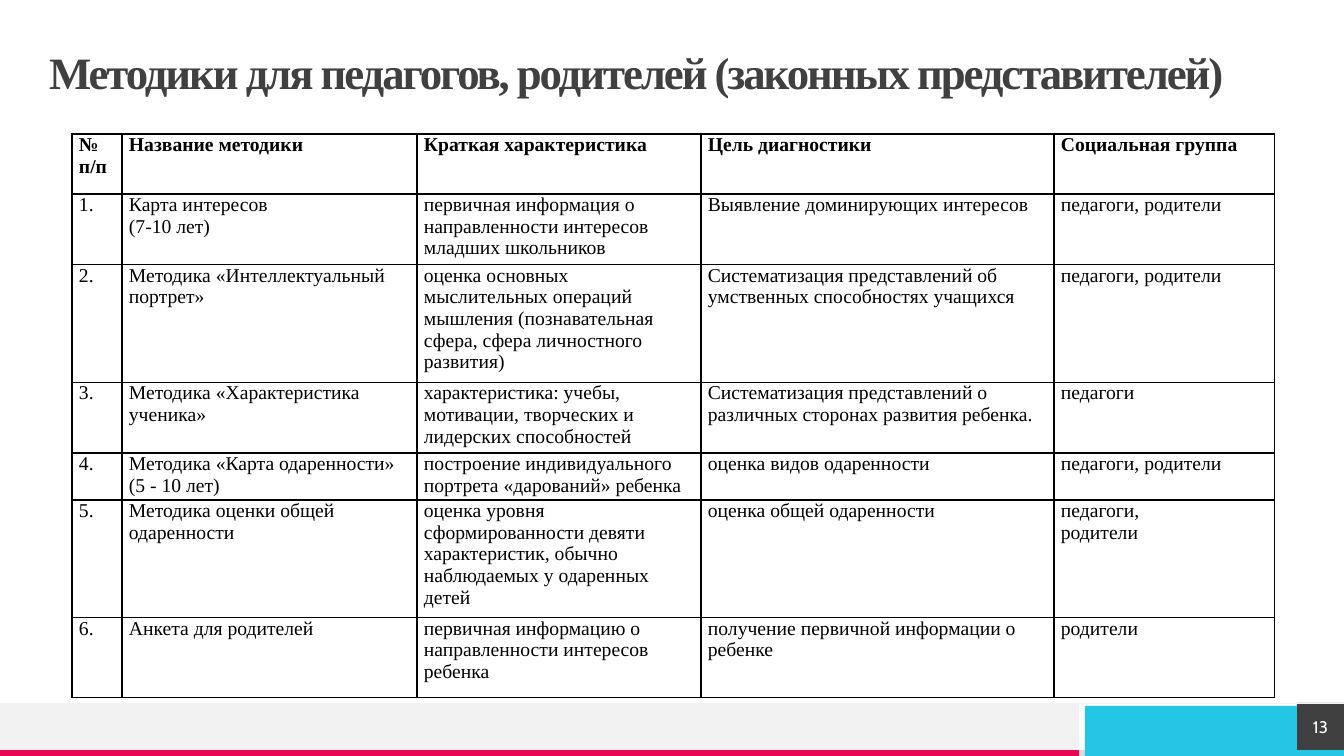
from lxml import etree
from pptx import Presentation
from pptx import util as u
from pptx.dml.color import RGBColor
from pptx.enum import shapes, text
from pptx.oxml import ns

PX = 914400 / 100.8
DARK = RGBColor(0x40, 0x40, 0x40)
BLACK = RGBColor(0, 0, 0)
WHITE = RGBColor(0xFF, 0xFF, 0xFF)
PALE = RGBColor(0xF2, 0xF2, 0xF2)
GREY = RGBColor(0xDA, 0xDA, 0xDA)
PINK = RGBColor(0xE8, 0x05, 0x54)
CYAN = RGBColor(0x25, 0xC6, 0xE3)
SERIF = "Times New Roman"


def px(*vals):
    return [u.Emu(round(v * PX)) for v in vals]


def write(para, words, size, color, face, bold=False):
    run = para.add_run()
    run.text = words
    font = run.font
    font.size, font.name, font.bold = u.Pt(size), face, bold
    font.color.rgb = color
    return run


deck = Presentation()
deck.slide_width, deck.slide_height = px(1344, 756)
slide = deck.slides.add_slide(deck.slide_layouts[6])

# Footer bars; the last but one holds the page number
bars = [
    (1079, 750, 218, 6, GREY, ""),
    (0, 703, 1079, 47, PALE, ""),
    (0, 750, 1079, 6, PINK, ""),
    (1297, 750, 47, 6, CYAN, ""),
    (1297, 703, 47, 47, DARK, "13"),
    (1085, 706, 212, 50, CYAN, ""),
]
for *box, color, label in bars:
    bar = slide.shapes.add_shape(shapes.MSO_SHAPE.RECTANGLE, *px(*box))
    bar.shadow.inherit = False
    bar.fill.solid()
    bar.fill.fore_color.rgb = color
    bar.line.fill.background()
    if label:
        frame = bar.text_frame
        frame.margin_left = frame.margin_right = 0
        frame.margin_top = frame.margin_bottom = 0
        frame.vertical_anchor = text.MSO_ANCHOR.MIDDLE
        frame.paragraphs[0].alignment = text.PP_ALIGN.CENTER
        write(frame.paragraphs[0], label, 12, WHITE, "Cabin")

# Footer hairline
rule = slide.shapes.add_connector(
    shapes.MSO_CONNECTOR.STRAIGHT, *px(1344, 703, 0, 703))
rule.line.color.rgb = PALE
rule.line.width = u.Pt(0.5)
etree.SubElement(rule._element.spPr, ns.qn("a:effectLst"))

# Title
title = slide.shapes.add_textbox(*px(49, 52, 1249, 47))
frame = title.text_frame
frame.word_wrap = True
frame.margin_left = frame.margin_right = 0
frame.margin_top = frame.margin_bottom = 0
frame.vertical_anchor = text.MSO_ANCHOR.MIDDLE
para = frame.paragraphs[0]
para.line_spacing = 0.9
run = write(para, "Методики для педагогов, родителей (законных представителей)",
            32, DARK, SERIF, True)
run.font._element.set("spc", "-150")

# Table of methods; a line break inside a cell starts a new paragraph
rows = [
    ("№\nп/п", "Название методики", "Краткая характеристика",
     "Цель диагностики", "Социальная группа"),
    ("1.", "Карта интересов\n(7-10 лет)",
     "первичная информация о направленности интересов младших школьников",
     "Выявление доминирующих интересов", "педагоги, родители"),
    ("2.", "Методика «Интеллектуальный портрет»",
     "оценка основных мыслительных операций мышления "
     "(познавательная сфера, сфера личностного развития)",
     "Систематизация представлений об умственных способностях учащихся",
     "педагоги, родители"),
    ("3.", "Методика «Характеристика ученика»",
     "характеристика: учебы, мотивации, творческих и лидерских способностей",
     "Систематизация представлений о различных сторонах развития ребенка.",
     "педагоги"),
    ("4.", "Методика «Карта одаренности»\n(5 - 10 лет)",
     "построение индивидуального портрета «дарований» ребенка",
     "оценка видов одаренности", "педагоги, родители"),
    ("5.", "Методика оценки общей одаренности",
     "оценка уровня сформированности девяти характеристик, "
     "обычно наблюдаемых у одаренных детей",
     "оценка общей одаренности", "педагоги,\nродители"),
    ("6.", "Анкета для родителей",
     "первичная информацию о направленности интересов ребенка",
     "получение первичной информации о ребенке", "родители"),
]
wides = [50, 295, 284, 353, 221]
highs = [60, 69, 108, 65, 43, 109, 80]
grid = slide.shapes.add_table(
    len(rows), len(wides), *px(72, 134, sum(wides), sum(highs))).table
grid.first_row = grid.horz_banding = False
for col, wide in zip(grid.columns, px(*wides)):
    col.width = wide
for row, high in zip(grid.rows, px(*highs)):
    row.height = high

for r, row in enumerate(rows):
    for c, words in enumerate(row):
        cell = grid.cell(r, c)
        cell.margin_left, cell.margin_right = px(7, 7)
        cell.margin_top = cell.margin_bottom = 0
        for i, line in enumerate(words.split("\n")):
            frame = cell.text_frame
            para = frame.add_paragraph() if i else frame.paragraphs[0]
            write(para, line, 14, BLACK, SERIF, r == 0)
        # Borders come before the fill in the cell properties
        props = cell._tc.get_or_add_tcPr()
        for side in ("lnL", "lnR", "lnT", "lnB"):
            edge = etree.SubElement(props, ns.qn("a:" + side), w=str(u.Pt(1)))
            fill = etree.SubElement(edge, ns.qn("a:solidFill"))
            etree.SubElement(fill, ns.qn("a:srgbClr"), val=str(BLACK))
        cell.fill.background()

deck.save("out.pptx")
